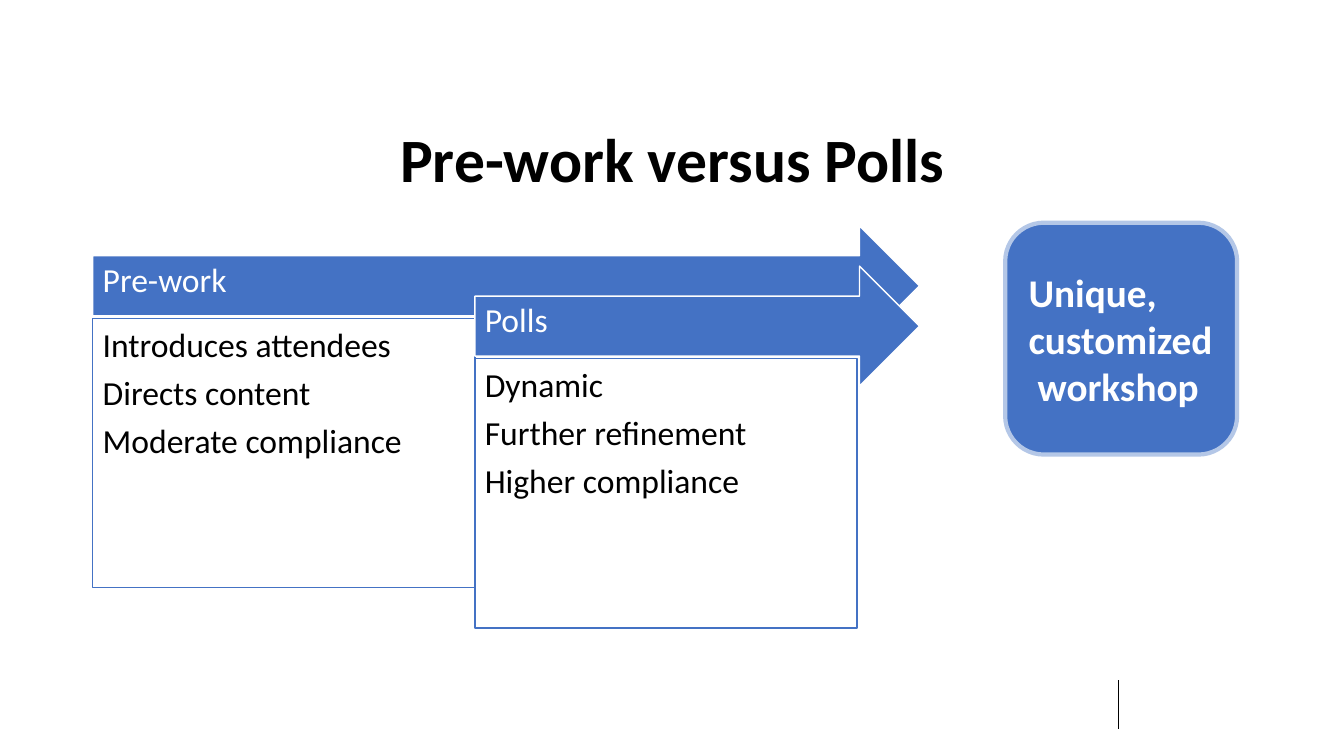
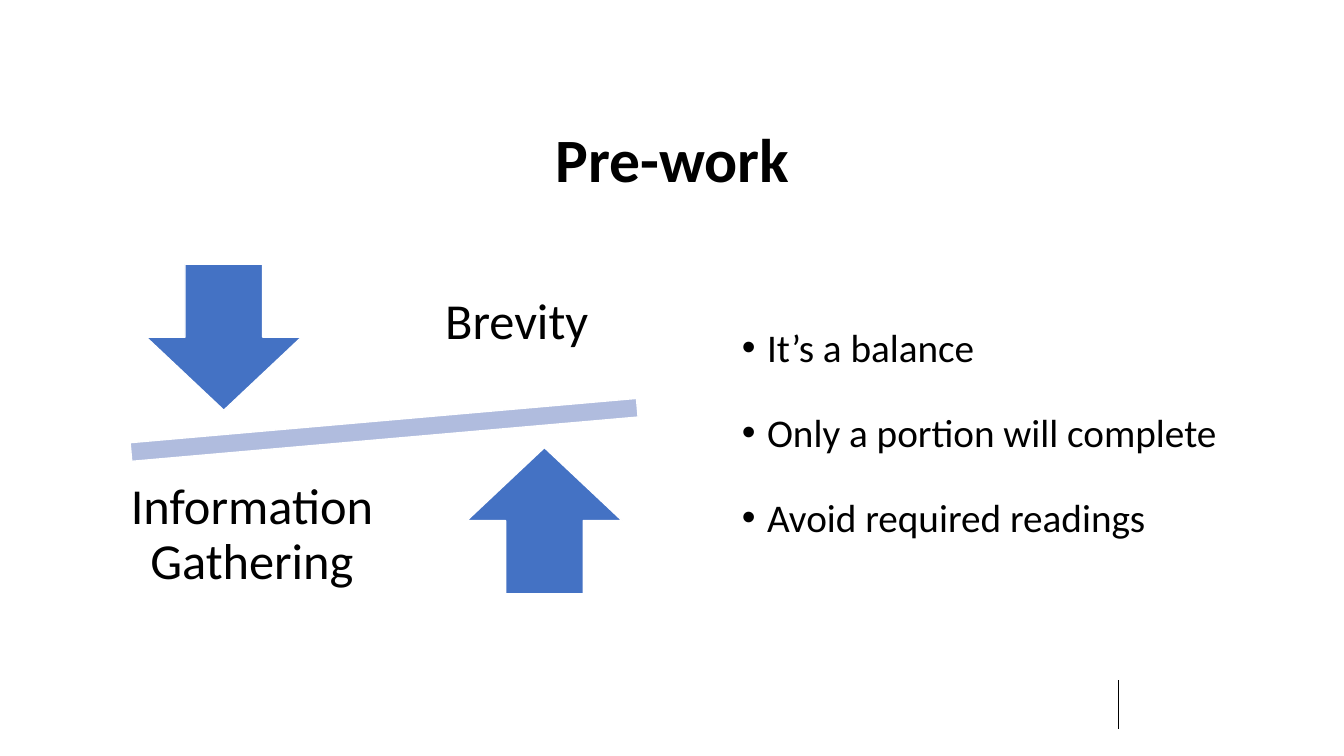
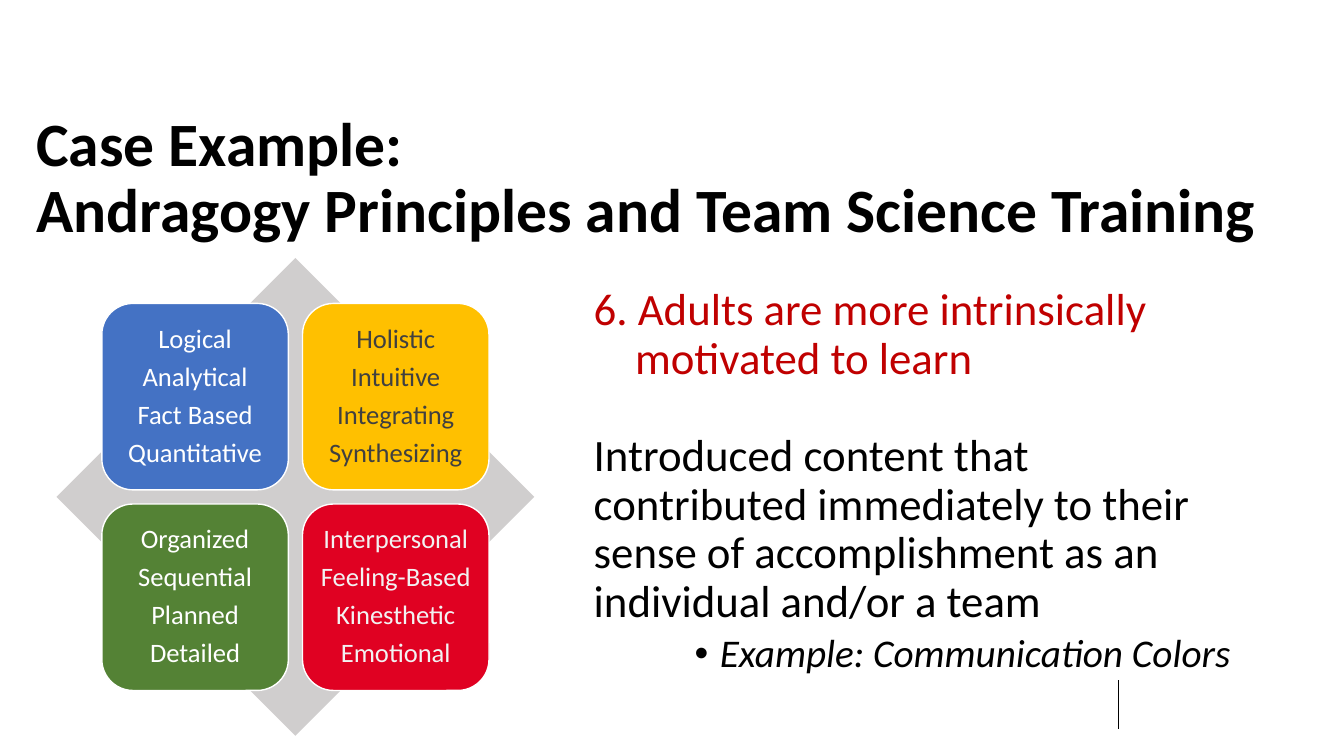
from lxml import etree
from pptx import Presentation
from pptx import util as u
from pptx.dml.color import RGBColor
from pptx.enum import shapes, text
from pptx.oxml import ns

PX = 9144
FONT = "Calibri"
BLACK, WHITE, BLUE = "000000", "FFFFFF", "4472C4"
LEFT, CENTER = text.PP_ALIGN.LEFT, text.PP_ALIGN.CENTER
TOP, MIDDLE = text.MSO_ANCHOR.TOP, text.MSO_ANCHOR.MIDDLE
KIND = shapes.MSO_SHAPE
color = RGBColor.from_string


def add_shape(slide, kind, place, fill, line=None, width=1):
    shape = slide.shapes.add_shape(kind, *[n * PX for n in place])
    shape.shadow.inherit = False
    shape.fill.solid()
    shape.fill.fore_color.rgb = color(fill)
    if line:
        shape.line.color.rgb = color(line)
        shape.line.width = u.Pt(width)
    else:
        shape.line.fill.background()
    return shape


def write(shape, lines, size, ink=BLACK, bold=False, align=LEFT, anchor=TOP,
          insets=(10, 5, 10, 5), spacing=0.9, before=0, after=0, bullet=False):
    frame = shape.text_frame
    frame.word_wrap = True
    frame.auto_size = text.MSO_AUTO_SIZE.NONE
    frame.vertical_anchor = anchor
    (frame.margin_left, frame.margin_top,
     frame.margin_right, frame.margin_bottom) = [n * PX for n in insets]
    frame.text = "\n".join(lines)
    for index, paragraph in enumerate(frame.paragraphs):
        paragraph.alignment = align
        paragraph.line_spacing = spacing
        paragraph.space_before = u.Pt(before if index else 0)
        paragraph.space_after = u.Pt(after)
        if bullet:
            properties = paragraph._p.get_or_add_pPr()
            properties.set("marL", str(25 * PX))
            properties.set("indent", str(-25 * PX))
            etree.SubElement(properties, ns.qn("a:buFont"), typeface="Arial")
            etree.SubElement(properties, ns.qn("a:buChar"), char="•")
        paragraph.font.name = FONT
        paragraph.font.size = u.Pt(size)
        paragraph.font.bold = bold
        paragraph.font.color.rgb = color(ink)
    return frame.paragraphs


presentation = Presentation()
presentation.slide_width = 1333 * PX
presentation.slide_height = 750 * PX

slides = []
for heading, place, align in [
    ("Pre-work versus Polls", (92, 100, 1150, 99), CENTER),
    ("Pre-work", (92, 100, 1150, 99), CENTER),
    ("Case Example:\vAndragogy Principles and Team Science Training",
     (26, 150, 1308, 99), LEFT),
]:
    slide = presentation.slides.add_slide(presentation.slide_layouts[5])
    title = slide.shapes.title
    title.left, title.top, title.width, title.height = [n * PX for n in place]
    write(title, [heading], 44, bold=True, align=align,
          anchor=text.MSO_ANCHOR.BOTTOM)
    rule = slide.shapes.add_connector(
        shapes.MSO_CONNECTOR.STRAIGHT, 1109 * PX, 675 * PX, 1109 * PX, 723 * PX)
    rule.line.color.rgb = color(BLACK)
    rule.line.width = u.Pt(0.5)
    etree.SubElement(rule._element.spPr, ns.qn("a:effectLst"))
    slides.append(slide)

compare_slide, balance_slide, case_slide = slides

for step, (label, points) in enumerate([
    ("Pre-work", ["Introduces attendees", "Directs content", "Moderate compliance"]),
    ("Polls", ["Dynamic", "Further refinement", "Higher compliance"]),
]):
    left, top = 92 + 379 * step, 224 + 40 * step
    arrow = add_shape(compare_slide, KIND.RIGHT_ARROW,
                      (left, top, 912 - left, 119), BLUE, WHITE)
    write(arrow, [label], 24, WHITE, anchor=MIDDLE,
          insets=(10, 10, 28, 19), after=8.4)
    panel = add_shape(compare_slide, KIND.RECTANGLE,
                      (left, top + 92, 379, 267), WHITE, BLUE)
    write(panel, points, 24, insets=(10, 10, 10, 10), after=8.4)

workshop = add_shape(compare_slide, KIND.ROUNDED_RECTANGLE,
                     (997, 221, 230, 230), BLUE, "B4C7E7", 3)
lines = write(workshop, ["Unique,", "customized", "workshop"], 28, WHITE, bold=True,
              anchor=MIDDLE, insets=(12, 5, 0, 5), spacing=1.0)
lines[-1]._p.get_or_add_pPr().set("marL", str(9 * PX))

beam = add_shape(balance_slide, KIND.MATH_MINUS, (38, 387, 686, 79), "B0BCDE", WHITE)
beam.rotation = 355
for kind, arrow_place, label, label_place in [
    (KIND.DOWN_ARROW, (145, 262, 154, 145), "Brevity", (402, 244, 221, 153)),
    (KIND.UP_ARROW, (463, 444, 154, 145), "Information Gathering", (82, 455, 336, 153)),
]:
    add_shape(balance_slide, kind, arrow_place, BLUE, WHITE)
    label_box = balance_slide.shapes.add_textbox(*[n * PX for n in label_place])
    write(label_box, [label], 36, align=CENTER, anchor=MIDDLE,
          insets=(28, 28, 28, 28), after=12.6)

advice = balance_slide.shapes.add_textbox(726 * PX, 293 * PX, 500 * PX, 266 * PX)
write(advice, ["It’s a balance", "Only a portion will complete",
               "Avoid required readings"], 28, spacing=1.5, before=10, bullet=True)

principle_box = case_slide.shapes.add_textbox(579 * PX, 280 * PX, 669 * PX, 392 * PX)
principle, content, example = write(principle_box, [
    "6. Adults are more intrinsically motivated to learn",
    "Introduced content that contributed immediately to their sense of "
    "accomplishment as an individual and/or a team",
    "Example: Communication Colors",
], 32, bullet=True)
for paragraph, margin, indent in [(principle, 41, -41), (content, 0, 0),
                                  (example, 125, -25)]:
    properties = paragraph._p.get_or_add_pPr()
    properties.set("marL", str(margin * PX))
    properties.set("indent", str(indent * PX))
    if paragraph is not example:
        for tag in ("a:buFont", "a:buChar"):
            properties.remove(properties.find(ns.qn(tag)))
principle.font.color.rgb = color("C00000")
content.space_before = u.Pt(35)
example.space_before = u.Pt(5)
example.font.size = u.Pt(28)
example.font.italic = True

add_shape(case_slide, KIND.DIAMOND, (56, 256, 474, 474), "D0CECE")
for index, (fill, ink, traits) in enumerate([
    (BLUE, WHITE, ["Logical", "Analytical", "Fact Based", "Quantitative"]),
    ("FFC000", "404040", ["Holistic", "Intuitive", "Integrating", "Synthesizing"]),
    ("548235", WHITE, ["Organized", "Sequential", "Planned", "Detailed"]),
    ("E00122", "F2F2F2", ["Interpersonal", "Feeling-Based", "Kinesthetic", "Emotional"]),
]):
    row, column = divmod(index, 2)
    tile = add_shape(case_slide, KIND.ROUNDED_RECTANGLE,
                     (101 + 199 * column, 301 + 199 * row, 185, 185), fill, WHITE)
    write(tile, traits, 19, ink, align=CENTER, anchor=MIDDLE,
          insets=(8, 8, 8, 8), after=6.65)

presentation.save("out.pptx")
